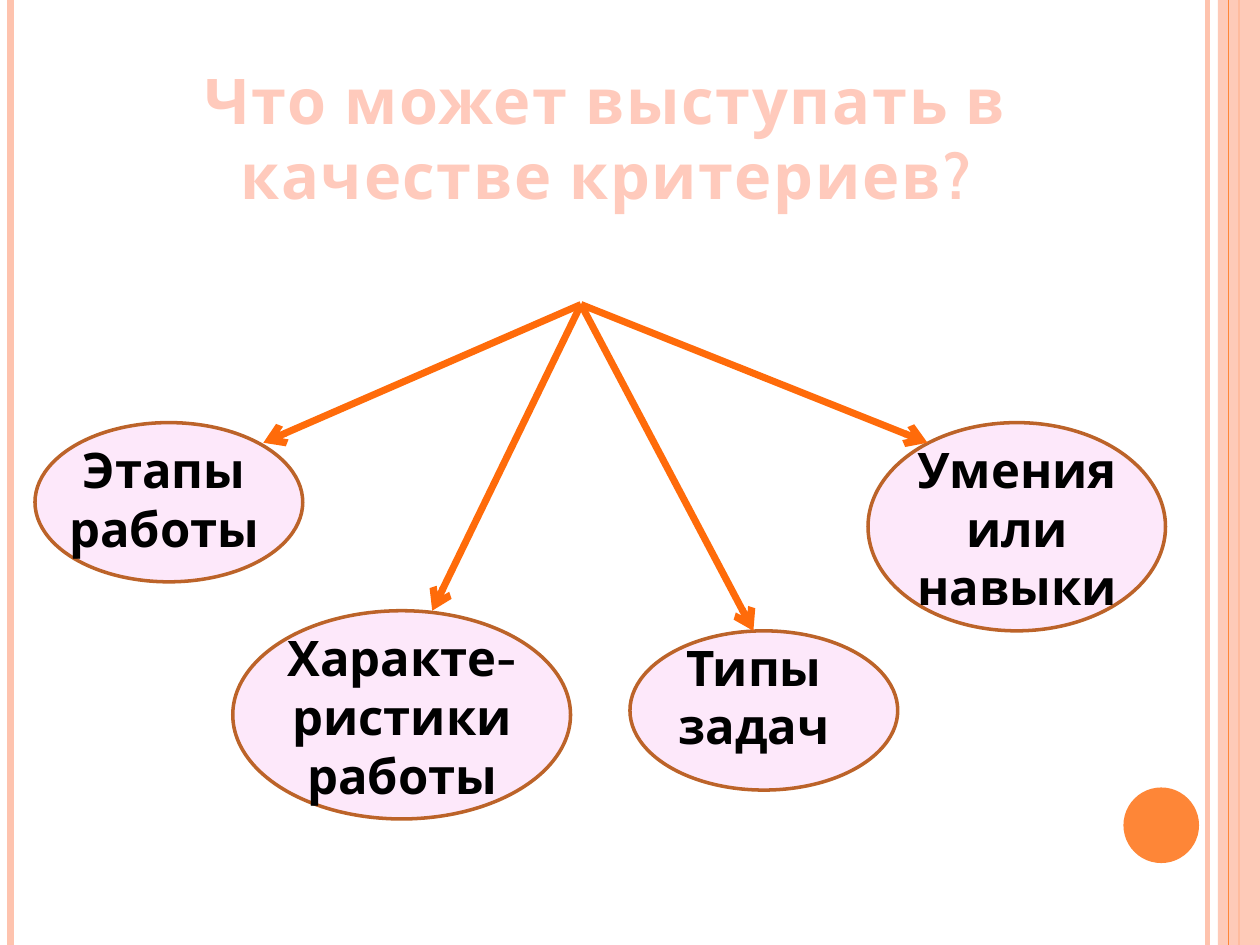
from pptx import Presentation
from pptx.dml.color import RGBColor
from pptx.enum.shapes import MSO_CONNECTOR, MSO_SHAPE
from pptx.enum.text import MSO_AUTO_SIZE, PP_ALIGN
from pptx.oxml.ns import qn
from pptx.util import Pt
from lxml import etree

STRAIGHT = MSO_CONNECTOR.STRAIGHT
OVAL = MSO_SHAPE.OVAL
RECT = MSO_SHAPE.RECTANGLE
CENTER = PP_ALIGN.CENTER
GROW = MSO_AUTO_SIZE.SHAPE_TO_FIT_TEXT

COLORS = {
    "peach": "FEC3AE",
    "orange": "FE8637",
    "arrow": "FF6B0A",
    "pink": "FCD2F6",
    "brown": "BC6329",
    "title": "FFCABC",
    "text": "000000",
}
RGB = {name: RGBColor.from_string(value) for name, value in COLORS.items()}

prs = Presentation()
prs.slide_width, prs.slide_height = Pt(720), Pt(540)
s = prs.slides.add_slide(prs.slide_layouts[6])


def add_line(x1, y1, x2, y2, color, width):
    ln = s.shapes.add_connector(STRAIGHT, Pt(x1), Pt(y1), Pt(x2), Pt(y2))
    ln.line.color.rgb = RGB[color]
    ln.line.width = Pt(width)
    etree.SubElement(ln._element.spPr, qn("a:effectLst"))
    return ln


def add_filled(kind, box, color, alpha=100, outline=None):
    sp = s.shapes.add_shape(kind, *map(Pt, box))
    sp.shadow.inherit = False
    sp.fill.solid()
    sp.fill.fore_color.rgb = RGB[color]
    if alpha < 100:
        clr = sp._element.spPr.find(qn("a:solidFill")).find(qn("a:srgbClr"))
        etree.SubElement(clr, qn("a:alpha"), val=str(alpha * 1000))
    if outline:
        sp.line.color.rgb = RGB[outline]
        sp.line.width = Pt(2)
    else:
        sp.line.fill.background()


for x, color, width in [(690, "peach", 3), (6, "peach", 4.5), (708, "orange", 1.5)]:
    add_line(x, 0, x, 540, color, width)
add_filled(RECT, (696, 0, 24, 540), "peach", 87)
add_line(702, 0, 702, 540, "orange", 0.75)
add_filled(OVAL, (642, 450, 43.2, 43.2), "orange")

ovals = [
    (496, 241.5, 170, 119),
    (360, 360.5, 153, 91),
    (133, 349, 193, 119),
    (20, 241.5, 153, 91),
]
for box in ovals:
    add_filled(OVAL, box, "pink", 50, "brown")

texts = [
    ("Что может выступать в качестве критериев?", (20, 31.5, 652.5, 94.5), 36, "title"),
    ("Этапы работы", (20, 247.5, 147.5, 75), 28, "text"),
    ("Характе-ристики работы", (156, 355, 147.5, 109), 28, "text"),
    ("Типы задач", (371.5, 360.5, 119, 75), 28, "text"),
    ("Умения или навыки", (507.5, 247.5, 147.5, 109), 28, "text"),
]
for text, box, size, color in texts:
    tf = s.shapes.add_textbox(*map(Pt, box)).text_frame
    tf.word_wrap = True
    tf.auto_size = GROW
    p = tf.paragraphs[0]
    p.alignment = CENTER
    p.font.name = "Cabin"
    p.font.size = Pt(size)
    p.font.bold = True
    p.font.color.rgb = RGB[color]
    r = p.add_run()
    r.text = text
    if color == "title":
        r._r.get_or_add_rPr().set("spc", "100")

for x, y in [(247, 349), (430.5, 360.5), (530, 253), (150.5, 253)]:
    ln = add_line(332, 174, x, y, "arrow", 4)
    etree.SubElement(ln.line._get_or_add_ln(), qn("a:tailEnd"), type="arrow")

prs.save("out.pptx")
